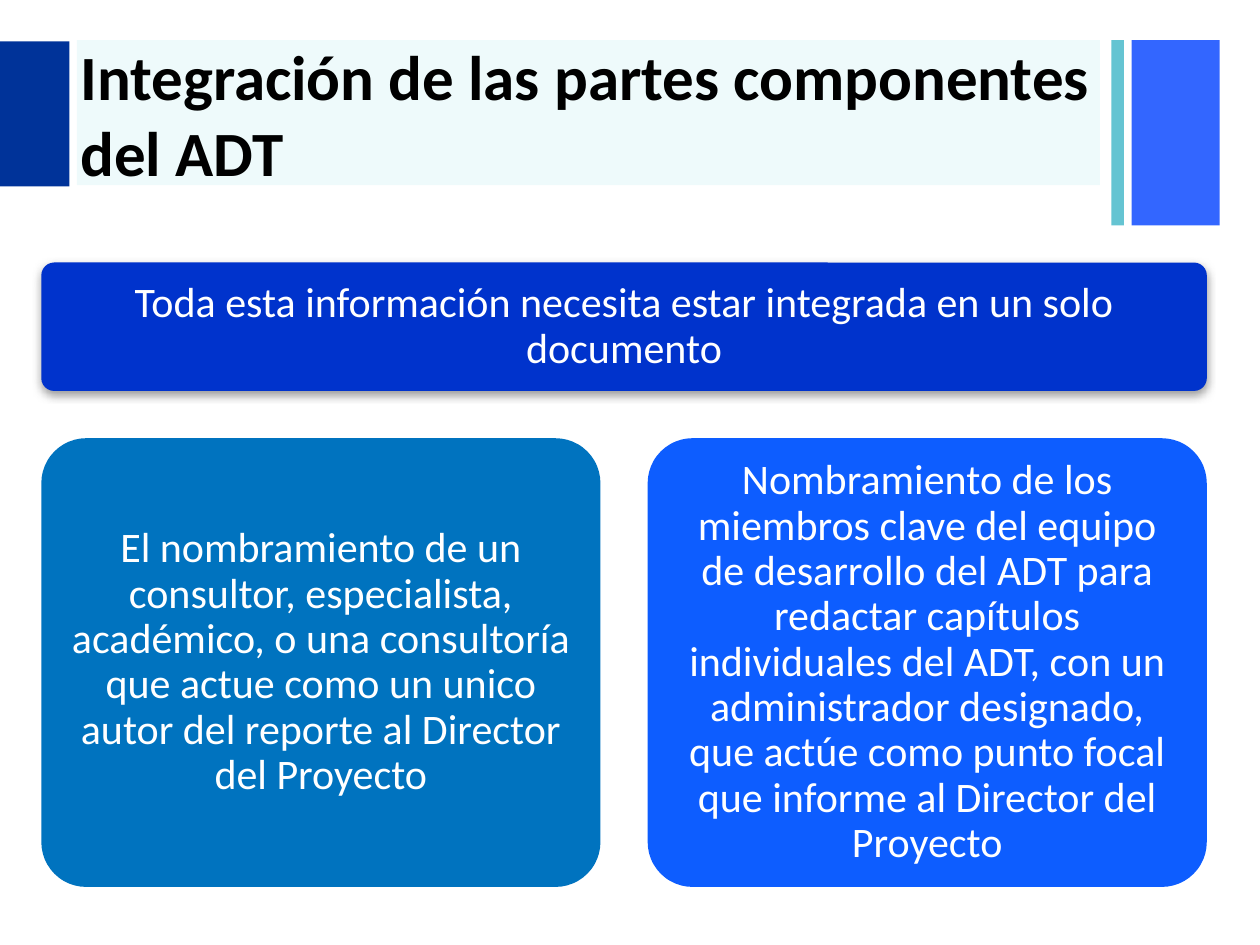
"""Build the slide on integrating the parts of the ADT."""
from lxml import etree
from pptx import Presentation
from pptx.dml.color import RGBColor
from pptx.enum.shapes import MSO_SHAPE
from pptx.enum.text import MSO_ANCHOR, PP_ALIGN
from pptx.oxml.ns import qn
from pptx.util import Pt

RECT, ROUNDED = MSO_SHAPE.RECTANGLE, MSO_SHAPE.ROUNDED_RECTANGLE
LEFT, CENTER = PP_ALIGN.LEFT, PP_ALIGN.CENTER
MIDDLE = MSO_ANCHOR.MIDDLE
FONT = "Calibri"
COLORS = {
    "navy": "003399", "tint": "14C5D0", "teal": "65C4D2", "blue": "3366FF",
    "banner": "0033CC", "author": "0073BF", "team": "0D5DFF",
    "shadow": "808080", "black": "000000", "white": "FFFFFF",
}
TITLE = "Integración de las partes componentes del ADT"
BANNER = "Toda esta información necesita estar integrada en un solo documento"
OPTIONS = [
    ("author", "El nombramiento de un consultor, especialista, académico, o una "
     "consultoría que actue como un unico autor del reporte al Director del Proyecto"),
    ("team", "Nombramiento de los miembros clave del equipo de desarrollo del ADT "
     "para redactar capítulos individuales del ADT, con un administrador designado, "
     "que actúe como punto focal que informe al Director del Proyecto"),
]


def add_block(slide, box, color, kind=RECT):
    """Add a filled, unlined block and return it."""
    block = slide.shapes.add_shape(kind, *map(Pt, box))
    block.shadow.inherit = False
    block.fill.solid()
    block.fill.fore_color.rgb = RGBColor.from_string(COLORS[color])
    block.line.fill.background()
    return block


def set_alpha(color_element, percent):
    """Set the opacity of a colour element."""
    etree.SubElement(color_element, qn("a:alpha"), val=str(percent * 1000))


def add_shadow(block):
    """Give a block a soft shadow straight below it."""
    effects = block._element.spPr.find(qn("a:effectLst"))
    shadow = etree.SubElement(effects, qn("a:outerShdw"), blurRad=str(Pt(5)),
                              dist=str(Pt(2)), dir="5400000", rotWithShape="0")
    set_alpha(etree.SubElement(shadow, qn("a:srgbClr"), val=COLORS["shadow"]), 75)


def write_text(shape, text, *, size=24, color="white", bold=False, align=CENTER,
               spacing=0.9, inset_x=7.2, inset_y=7.2):
    """Write one formatted paragraph, centred vertically in a shape."""
    frame = shape.text_frame
    frame.word_wrap = True
    frame.vertical_anchor = MIDDLE
    frame.margin_left = frame.margin_right = Pt(inset_x)
    frame.margin_top = frame.margin_bottom = Pt(inset_y)
    paragraph = frame.paragraphs[0]
    paragraph.alignment = align
    paragraph.line_spacing = spacing
    run = paragraph.add_run()
    run.text = text
    run.font.name, run.font.size, run.font.bold = FONT, Pt(size), bold
    run.font.color.rgb = RGBColor.from_string(COLORS[color])


def add_header(slide, left, top, width):
    """Place the title band with its coloured bars."""
    band_height, bar_height = 82.8, 105.8
    add_block(slide, (left + width - 50.4, top, 50.4, bar_height), "blue")
    add_block(slide, (left + width - 61.9, top, 7.2, bar_height), "teal")
    band = add_block(slide, (left + 43.9, top, 584.6, band_height), "tint")
    set_alpha(band.fill._xPr.find(".//" + qn("a:srgbClr")), 7)
    add_block(slide, (left, top + 0.7, 39.6, band_height), "navy")
    title = slide.shapes.add_textbox(
        *map(Pt, (left + 38.9, top + 1.4, 595.4, 80.6)))
    write_text(title, TITLE, size=36, color="black", bold=True, align=LEFT,
               spacing=1, inset_y=3.6)


def add_options(slide, left, top, width, height):
    """Place the banner above an even row of option cards."""
    banner_height, gap = 73.4, 27
    banner = add_block(slide, (left, top, width, banner_height), "banner", ROUNDED)
    banner.adjustments[0] = 0.1
    add_shadow(banner)
    write_text(banner, BANNER)
    card_top = top + banner_height + gap
    card_width = (width - gap * (len(OPTIONS) - 1)) / len(OPTIONS)
    for index, (color, text) in enumerate(OPTIONS):
        box = (left + index * (card_width + gap), card_top,
               card_width, top + height - card_top)
        card = add_block(slide, box, color, ROUNDED)
        card.adjustments[0] = 0.1
        write_text(card, text)


def main():
    """Build and save the presentation."""
    presentation = Presentation()
    presentation.slide_width, presentation.slide_height = Pt(720), Pt(540)
    slide = presentation.slides.add_slide(presentation.slide_layouts[6])
    add_header(slide, 0, 23, 697)
    add_options(slide, 23.6, 150, 666, 356.8)
    presentation.save("out.pptx")


if __name__ == "__main__":
    main()
